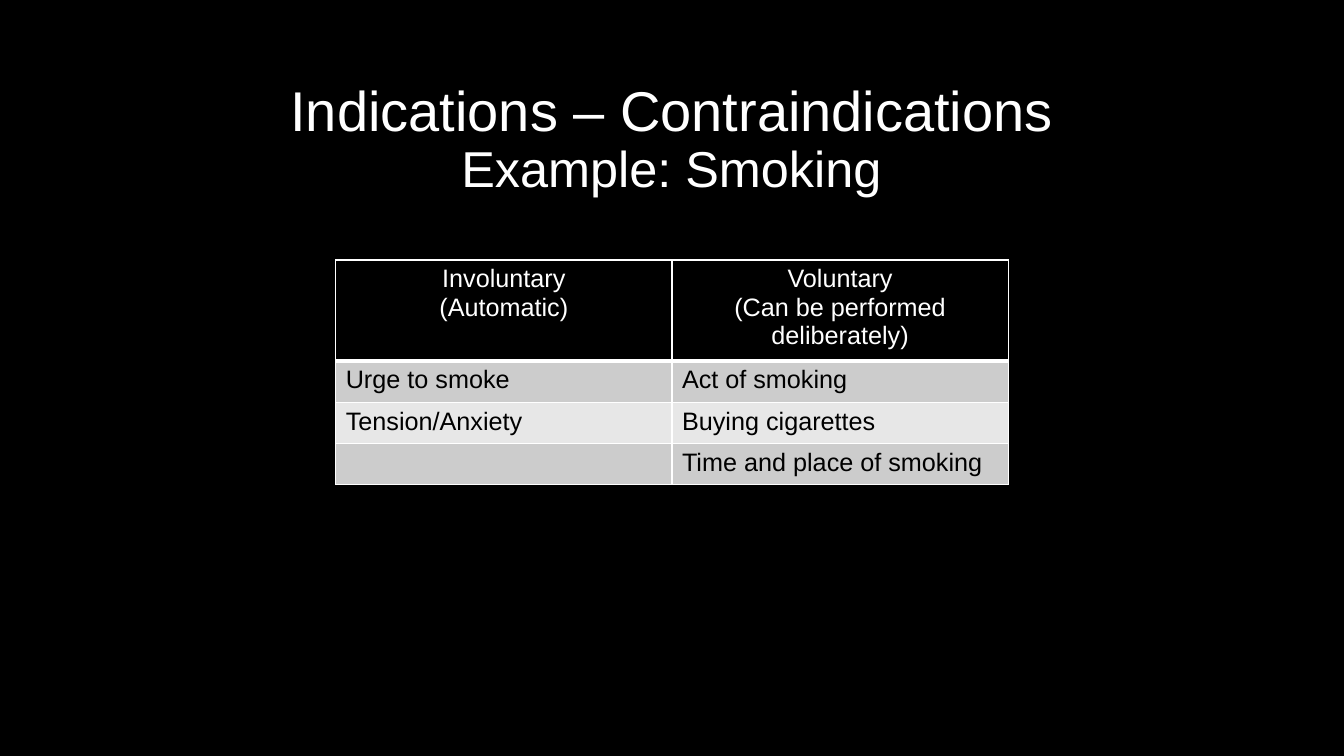
"""Build a slide with a two-line title and a table of smoking behaviours."""
import pptx
import pptx.dml.color
import pptx.enum.text
import pptx.oxml
import pptx.oxml.ns
import pptx.util

Inches = pptx.util.Inches
Pt = pptx.util.Pt
BLACK = pptx.dml.color.RGBColor(0x00, 0x00, 0x00)
WHITE = pptx.dml.color.RGBColor(0xFF, 0xFF, 0xFF)
DARK_BAND = pptx.dml.color.RGBColor(0xCC, 0xCC, 0xCC)
LIGHT_BAND = pptx.dml.color.RGBColor(0xE7, 0xE7, 0xE7)
CENTER = pptx.enum.text.PP_ALIGN.CENTER
LEFT = pptx.enum.text.PP_ALIGN.LEFT

TITLE_LINES = [("Indications – Contraindications", 40), ("Example: Smoking", 36)]
ROWS = [
    ("Involuntary\n(Automatic)", "Voluntary\n(Can be performed deliberately)"),
    ("Urge to smoke", "Act of smoking"),
    ("Tension/Anxiety", "Buying cigarettes"),
    ("", "Time and place of smoking"),
]
HEADER_HEIGHT = 0.94
ROW_HEIGHT = 0.41


def format_font(font, size, color):
    """Apply the slide typeface with a size and colour."""
    values = {"name": "Arial", "size": Pt(size), "bold": False}
    for name, value in values.items():
        setattr(font, name, value)
    font.color.rgb = color


def add_title(slide, left, top, width, height):
    """Place the centred title with its smaller second line."""
    frame = slide.shapes.add_textbox(
        Inches(left), Inches(top), Inches(width), Inches(height)).text_frame
    frame.word_wrap = True
    frame.vertical_anchor = pptx.enum.text.MSO_ANCHOR.MIDDLE
    paragraph = frame.paragraphs[0]
    paragraph.alignment = CENTER
    paragraph.line_spacing = 0.9
    for index, (text, size) in enumerate(TITLE_LINES):
        if index:
            paragraph.add_line_break()
        run = paragraph.add_run()
        run.text = text
        format_font(run.font, size, WHITE)


def set_borders(cell, bottom_width):
    """Draw white borders, one point wide except at the bottom."""
    properties = cell._tc.get_or_add_tcPr()
    widths = {"lnL": 1, "lnR": 1, "lnT": 1, "lnB": bottom_width}
    for index, (tag, width) in enumerate(widths.items()):
        properties.insert(index, pptx.oxml.parse_xml(
            f'<a:{tag} {pptx.oxml.ns.nsdecls("a")} w="{Pt(width)}">'
            f'<a:solidFill><a:srgbClr val="{WHITE}"/></a:solidFill></a:{tag}>'))


def fill_cell(cell, text, row_index):
    """Write and format one cell as header or banded body."""
    header = row_index == 0
    band = DARK_BAND if row_index % 2 else LIGHT_BAND
    cell.fill.solid()
    cell.fill.fore_color.rgb = BLACK if header else band
    cell.text = text
    for paragraph in cell.text_frame.paragraphs:
        paragraph.alignment = CENTER if header else LEFT
        format_font(paragraph.font, 18, WHITE if header else BLACK)
        for run in paragraph.runs:
            format_font(run.font, 18, WHITE if header else BLACK)
    set_borders(cell, 3 if header else 1)


def add_behaviour_table(slide, left, top, width):
    """Place the table of involuntary and voluntary behaviours."""
    heights = [HEADER_HEIGHT] + [ROW_HEIGHT] * (len(ROWS) - 1)
    table = slide.shapes.add_table(
        len(ROWS), len(ROWS[0]), Inches(left), Inches(top),
        Inches(width), Inches(sum(heights))).table
    for row_index, texts in enumerate(ROWS):
        table.rows[row_index].height = Inches(heights[row_index])
        for column_index, text in enumerate(texts):
            fill_cell(table.cell(row_index, column_index), text, row_index)


def main():
    """Create the presentation and save it."""
    presentation = pptx.Presentation()
    presentation.slide_width = Inches(13.33)
    presentation.slide_height = Inches(7.5)
    slide = presentation.slides.add_slide(presentation.slide_layouts[6])
    slide.background.fill.solid()
    slide.background.fill.fore_color.rgb = BLACK
    add_title(slide, 1, 0.67, 11.32, 1.45)
    add_behaviour_table(slide, 3.33, 2.58, 6.67)
    presentation.save("out.pptx")


if __name__ == "__main__":
    main()
